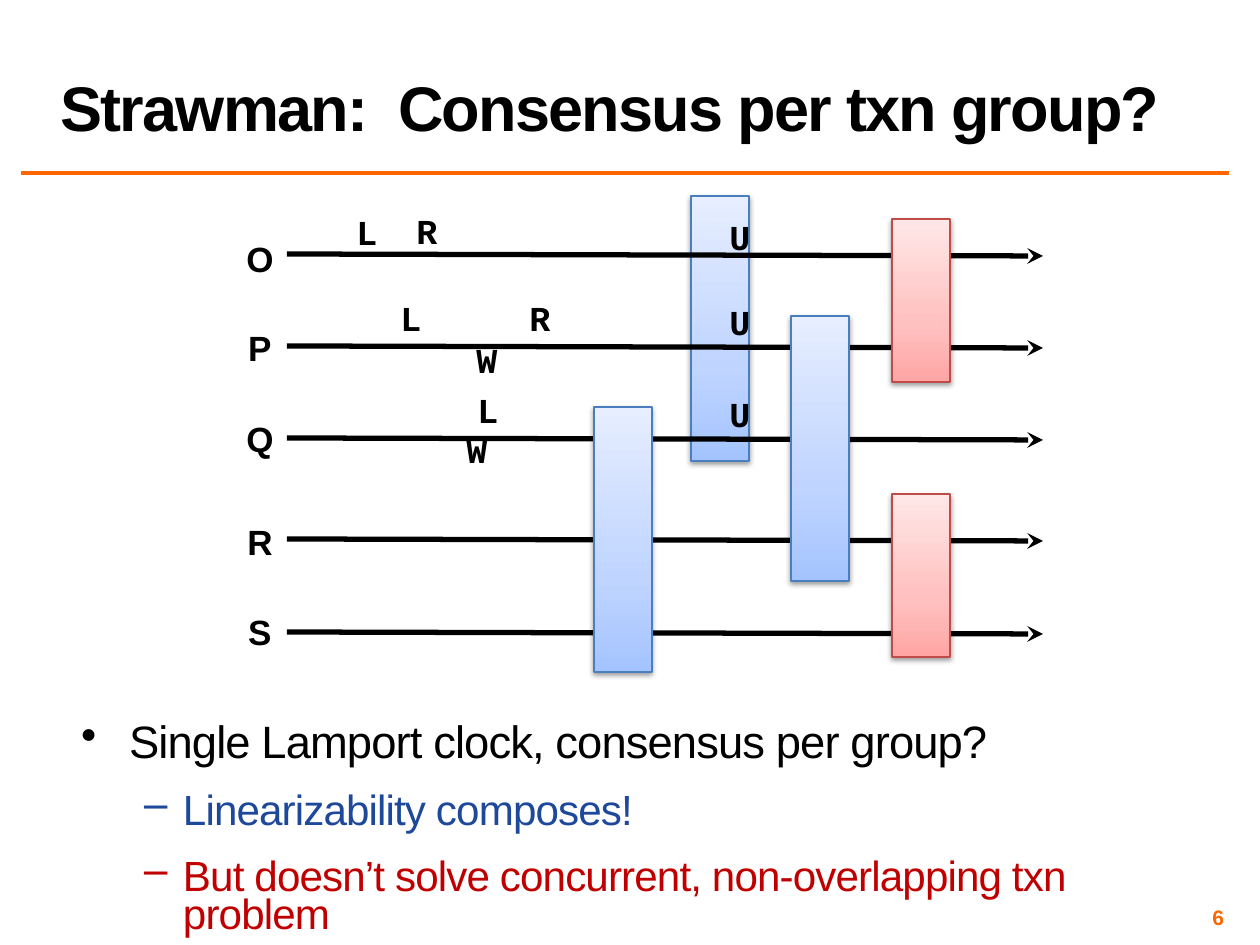
from pptx import Presentation
from pptx import util as u
from pptx.dml.color import RGBColor
from pptx.enum import shapes, text
from pptx.oxml import parse_xml
from pptx.oxml.ns import nsdecls, qn
from lxml import etree

HUES = {"ink": "000000", "orange": "FF6600", "navy": "1E4899", "red": "C00000",
        "blue line": "4B7EBC", "rose line": "BF4C48"}
FADES = {"blue": ((0, "A4C4FF"), (35, "BFD4FF"), (100, "E6EEFF")),
         "rose": ((0, "FFA6A5"), (35, "FFC0BF"), (100, "FFE7E7"))}

TITLE = "Strawman:  Consensus per txn group?"
LANES = [("O", 254, 231), ("P", 346, 320), ("Q", 438, 411),
         ("R", 539, 514), ("S", 632, 604)]
LANE_X, LANE_END, DROP = 287, 1043, 2
OPS = [("L", 367, 204), ("L", 411, 290), ("L", 488, 382),
       ("U", 740, 209), ("U", 740, 294), ("U", 740, 386),
       ("R", 427, 203), ("R", 540, 290), ("W", 487, 332), ("W", 477, 422)]
BACK = ("blue", 691, 196, 265)
FRONT = [("blue", 594, 407, 265), ("blue", 791, 316, 265),
         ("rose", 892, 219, 163), ("rose", 892, 494, 163)]
BAR_W, OP_W, ROW_H = 58, 60, 55
POINTS = [("Single Lamport clock, consensus per group?", "•", 0, 48, 48, 25.9, "ink", 0.8),
          ("Linearizability composes!", "–", 1, 102, 39, 24.1, "navy", 0.75),
          ("But doesn’t solve concurrent, non-overlapping txn problem", "–", 1, 102, 39, 24.1, "red", 0.75)]


def px(n):
    return u.Emu(round(n * 914400 / 126))


def hue(name):
    return RGBColor.from_string(HUES[name])


def style(para, size, color="ink", bold=False, face="Arial"):
    font = para.font
    font.name, font.size, font.bold = face, u.Pt(size), bold
    font.color.rgb = hue(color)


def frame(home, x, y, w, h, wrap=True, pad=None):
    tf = home.add_textbox(px(x), px(y), px(w), px(h)).text_frame
    tf.word_wrap = wrap
    if pad is not None:
        tf.margin_left = tf.margin_right = tf.margin_top = tf.margin_bottom = px(pad)
    return tf


def label(home, word, mid, y, w, face="Arial"):
    para = frame(home, mid - w / 2, y, w, ROW_H, wrap=False).paragraphs[0]
    para.text, para.alignment = word, text.PP_ALIGN.CENTER
    style(para, 20, bold=True, face=face)


def line(home, x1, y1, x2, y2, color, width, arrow=False):
    link = home.add_connector(shapes.MSO_CONNECTOR.STRAIGHT, px(x1), px(y1), px(x2), px(y2))
    link.line.color.rgb, link.line.width = hue(color), u.Pt(width)
    if arrow:
        etree.SubElement(link.line._get_or_add_ln(), qn("a:tailEnd"), type="stealth")
    etree.SubElement(link._element.spPr, qn("a:effectLst"))


def bar(home, kind, x, y, h):
    box = home.add_shape(shapes.MSO_SHAPE.RECTANGLE, px(x), px(y), px(BAR_W), px(h))
    box.line.color.rgb, box.line.width = hue(kind + " line"), u.Pt(0.75)
    stops = "".join(f'<a:gs pos="{at * 1000}"><a:srgbClr val="{c}"/></a:gs>'
                    for at, c in FADES[kind])
    props = box._element.spPr
    props.insert(2, parse_xml(
        f'<a:gradFill {nsdecls("a")} rotWithShape="1"><a:gsLst>{stops}</a:gsLst>'
        '<a:lin ang="16200000" scaled="0"/></a:gradFill>'))
    props.append(parse_xml(
        f'<a:effectLst {nsdecls("a")}><a:outerShdw blurRad="39400" dist="20300" dir="5400000" '
        'rotWithShape="0"><a:srgbClr val="000000"><a:alpha val="38000"/></a:srgbClr>'
        '</a:outerShdw></a:effectLst>'))


def track(para, points):
    for run in para.runs:
        run._r.get_or_add_rPr().set("spc", str(int(points * 100)))


def bullet(para, mark, left, hang):
    props = para._p.get_or_add_pPr()
    props.set("marL", str(px(left)))
    props.set("indent", str(-px(hang)))
    node = parse_xml(f'<a:buChar {nsdecls("a")} char="{mark}"/>')
    props.find(qn("a:defRPr")).addprevious(node)


def main():
    deck = Presentation()
    deck.slide_width, deck.slide_height = px(1260), px(945)
    home = deck.slides.add_slide(deck.slide_layouts[6]).shapes

    line(home, 21, 173, 1229, 173, "orange", 2)
    bar(home, *BACK)

    tf = frame(home, 935, 903, 294, 29, pad=5)
    tf.vertical_anchor = text.MSO_ANCHOR.MIDDLE
    para = tf.paragraphs[0]
    para.text, para.alignment = "6", text.PP_ALIGN.RIGHT
    style(para, 12, "orange", True)

    tf = frame(home, 48, 3, 1181, 147)
    tf.vertical_anchor = text.MSO_ANCHOR.BOTTOM
    para = tf.paragraphs[0]
    para.text, para.line_spacing = TITLE, 0.8
    style(para, 36, bold=True)
    track(para, -1)

    for name, y, top in LANES:
        lane = home.add_group_shape().shapes
        line(lane, LANE_X, y, LANE_END, y + DROP, "ink", 3, arrow=True)
        label(lane, name, 260, top, 52)
    for op, mid, y in OPS:
        label(home, op, mid, y, OP_W, "Courier New")
    for item in FRONT:
        bar(home, *item)

    tf = frame(home, 76, 719, 1153, 198, pad=5)
    for i, (words, mark, level, left, hang, size, color, gap) in enumerate(POINTS):
        para = tf.add_paragraph() if i else tf.paragraphs[0]
        para.text, para.level, para.line_spacing = words, level, gap
        para.space_before, para.space_after = u.Pt(8 if i else 0), u.Pt(8)
        style(para, size, color)
        bullet(para, mark, left, hang)
        track(para, -0.5)

    deck.save("out.pptx")


if __name__ == "__main__":
    main()
